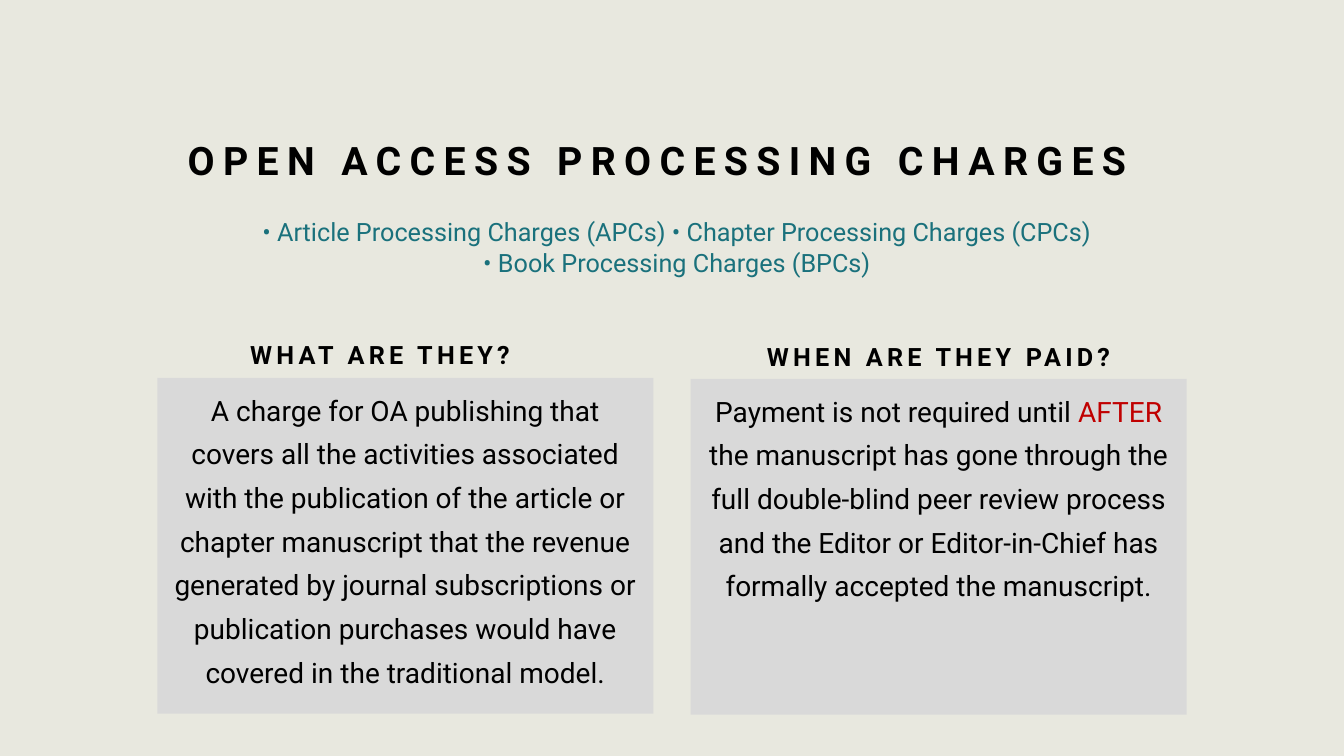
from dataclasses import dataclass

from pptx import Presentation
from pptx import util as u
from pptx.dml.color import RGBColor
from pptx.enum import shapes, text

PX = 9144  # EMU per px, 100 px to the inch


@dataclass(frozen=True)
class Theme:
    font: str = "Roboto"
    background: str = "E8E8DF"
    panel: str = "D9D9D9"
    ink: str = "000000"
    accent: str = "1A717C"
    alert: str = "C00000"
    title: int = 28
    heading: int = 18
    body: int = 20


T = Theme()


def px(*lengths):
    return [u.Emu(n * PX) for n in lengths]


def rgb(color):
    return RGBColor.from_string(color)


def add_text(sp, paragraphs, size, color=T.ink, bold=False, tracking=0,
             line=1.0, anchor=text.MSO_ANCHOR.TOP):
    """Each paragraph is a list of (wording, colour or None) runs."""
    tf = sp.text_frame
    tf.word_wrap = True
    tf.vertical_anchor = anchor
    for i, runs in enumerate(paragraphs):
        p = tf.paragraphs[0] if i == 0 else tf.add_paragraph()
        p.alignment = text.PP_ALIGN.CENTER
        p.line_spacing = line
        for wording, run_color in runs:
            r = p.add_run()
            r.text = wording
            r.font.name = T.font
            r.font.size = u.Pt(size)
            r.font.bold = bold
            r.font.color.rgb = rgb(run_color or color)
            if tracking:
                r.font._element.set("spc", str(tracking * 100))


def header(s, x, y, w, h):
    # Title
    sp = s.shapes.add_textbox(*px(x + 70, y, w - 167, 90))
    add_text(sp, [[("OPEN ACCESS PROCESSING CHARGES ", None)]], T.title,
             bold=True, tracking=6, line=1.2, anchor=text.MSO_ANCHOR.BOTTOM)
    # Kinds of charge
    sp = s.shapes.add_textbox(*px(x, y + h - 71, w, 71))
    add_text(sp, [
        [("• Article Processing Charges (APCs) • Chapter Processing Charges (CPCs) ", None)],
        [("• Book Processing Charges (BPCs) ", None)],
    ], T.heading, color=T.accent)


def question(s, x, y, w, h, heading, answer, heading_shift=(0, 0)):
    # Heading above the panel
    dx, dy = heading_shift
    sp = s.shapes.add_textbox(*px(x + dx, y - 79 + dy, w, 77))
    add_text(sp, [[(heading, None)]], T.heading, bold=True, tracking=3,
             anchor=text.MSO_ANCHOR.BOTTOM)
    # Panel with the answer
    sp = s.shapes.add_shape(shapes.MSO_SHAPE.RECTANGLE, *px(x, y, w, h))
    sp.shadow.inherit = False
    sp.fill.solid()
    sp.fill.fore_color.rgb = rgb(T.panel)
    sp.line.fill.background()
    add_text(sp, [answer], T.body, line=1.3)


def main():
    prs = Presentation()
    prs.slide_width, prs.slide_height = px(1333, 750)
    s = prs.slides.add_slide(prs.slide_layouts[6])
    s.background.fill.solid()
    s.background.fill.fore_color.rgb = rgb(T.background)

    header(s, 86, 97, 1177, 184)
    question(s, 156, 375, 492, 333, "WHAT ARE THEY?", [
        ("A charge for OA publishing that covers all the activities associated "
         "with the publication of the article or chapter manuscript that the "
         "revenue generated by journal subscriptions or publication purchases "
         "would have covered in the traditional model.", None),
    ], heading_shift=(-25, -1))
    question(s, 685, 376, 492, 333, "WHEN ARE THEY PAID?", [
        ("Payment is not required until ", None),
        ("AFTER", T.alert),
        (" the manuscript has gone through the full double-blind peer review "
         "process and the Editor or Editor-in-Chief has formally accepted the "
         "manuscript.", None),
    ])
    prs.save("out.pptx")


if __name__ == "__main__":
    main()
